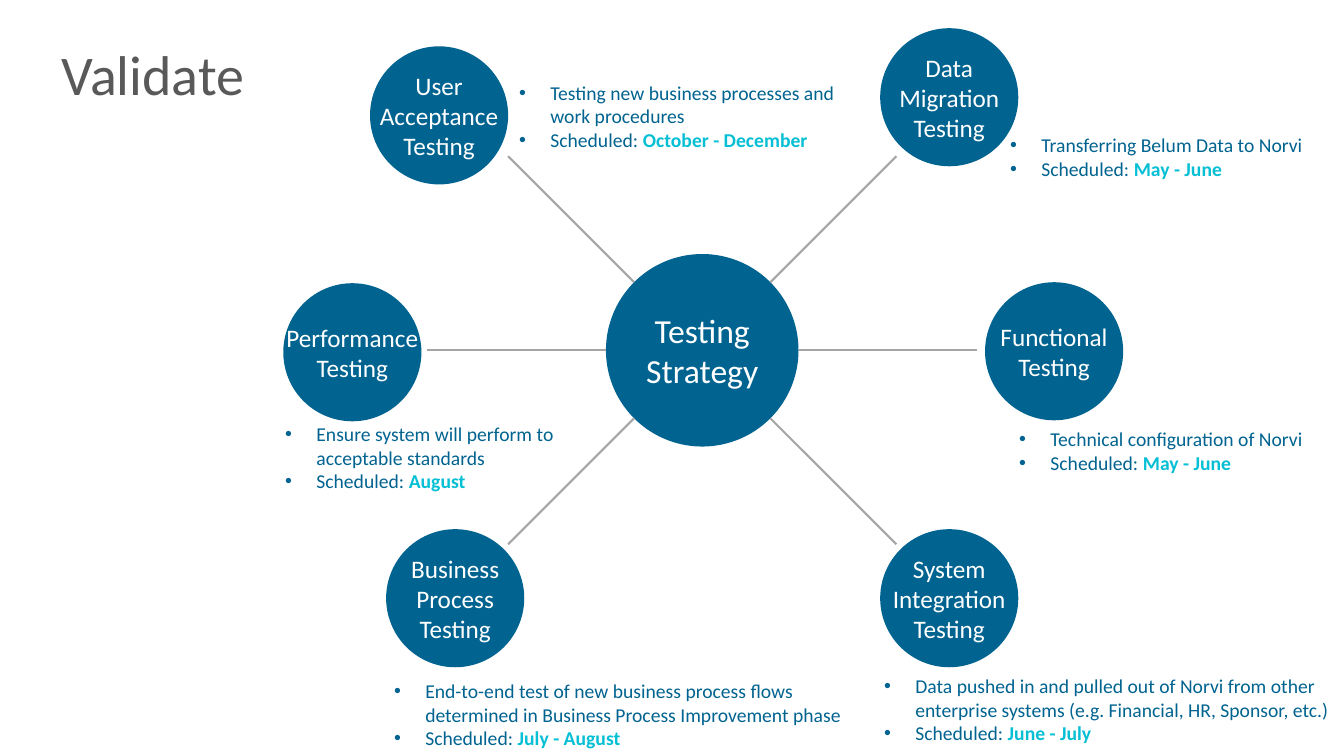
from dataclasses import dataclass
from math import hypot

from lxml.etree import SubElement
from pptx import Presentation
from pptx.dml.color import RGBColor
from pptx.enum.shapes import MSO_CONNECTOR, MSO_SHAPE
from pptx.enum.text import MSO_ANCHOR, PP_ALIGN
from pptx.oxml.ns import qn
from pptx.util import Inches, Pt


@dataclass(frozen=True)
class Theme:
    font: str = "Calibri"
    title: RGBColor = RGBColor(0x58, 0x59, 0x58)
    blue: RGBColor = RGBColor(0x00, 0x63, 0x90)
    accent: RGBColor = RGBColor(0x05, 0xBF, 0xD5)
    spoke: RGBColor = RGBColor(0xA5, 0xA5, 0xA5)
    white: RGBColor = RGBColor(0xFF, 0xFF, 0xFF)
    title_size: int = 40
    hub_size: int = 24
    stage_size: int = 18
    note_size: int = 14


@dataclass(frozen=True)
class Stage:
    label: str
    summary: str
    schedule: str
    direction: tuple  # way the spoke leaves the hub
    offset: tuple     # circle centre from hub centre
    note: tuple       # note left, top from the circle's corner, width, height


THEME = Theme()
HUB_BOX = (6.01, 2.52, 1.91, 1.91)
STAGE_DIAMETER = 1.37
DIAGONAL_RUN = 1.25
LEVEL_RUN = 1.77
BULLET_INDENT = 0.31

STAGES = [
    Stage("Data\nMigration\nTesting", "Transferring Belum Data to Norvi", "May - June",
          (1, -1), (2.45, -2.51), (1.19, 0.99, 3.13, 0.57)),
    Stage("Functional\nTesting", "Technical configuration of Norvi", "May - June",
          (1, 0), (3.49, 0.01), (0.24, 1.39, 3.15, 0.57)),
    Stage("System\nIntegration\nTesting",
          "Data pushed in and pulled out of Norvi from other enterprise systems "
          "(e.g. Financial, HR, Sponsor, etc.)", "June - July",
          (1, 1), (2.45, 2.46), (-0.06, 1.39, 4.66, 0.81)),
    Stage("Business\nProcess\nTesting",
          "End-to-end test of new business process flows determined in "
          "Business Process Improvement phase", "July - August",
          (-1, 1), (-2.45, 2.46), (-0.02, 1.44, 4.66, 0.81)),
    Stage("Performance\nTesting", "Ensure system will perform to acceptable standards", "August",
          (-1, 0), (-3.47, 0.02), (-0.08, 1.33, 3.23, 0.81)),
    Stage("User\nAcceptance\nTesting", "Testing new business processes and work procedures",
          "October - December", (-1, -1), (-2.61, -2.33), (1.38, 0.29, 3.48, 0.81)),
]


def inches(box):
    return [Inches(length) for length in box]


def set_font(paragraph, size, color):
    paragraph.font.name = THEME.font
    paragraph.font.size = Pt(size)
    paragraph.font.color.rgb = color


def add_title(slide, box, text):
    title = slide.shapes.title
    title.left, title.top, title.width, title.height = inches(box)
    title.text_frame.text = text
    title.text_frame.vertical_anchor = MSO_ANCHOR.MIDDLE
    heading = title.text_frame.paragraphs[0]
    heading.alignment = PP_ALIGN.LEFT
    heading.line_spacing = 0.9
    set_font(heading, THEME.title_size, THEME.title)


def add_circle(slide, box, label, size):
    circle = slide.shapes.add_shape(MSO_SHAPE.OVAL, *inches(box))
    circle.shadow.inherit = False
    circle.fill.solid()
    circle.fill.fore_color.rgb = THEME.blue
    circle.line.fill.background()
    frame = circle.text_frame
    frame.word_wrap = False
    frame.vertical_anchor = MSO_ANCHOR.MIDDLE
    frame.margin_left = frame.margin_right = frame.margin_top = frame.margin_bottom = 0
    frame.text = label
    for line in frame.paragraphs:
        line.alignment = PP_ALIGN.CENTER
        set_font(line, size, THEME.white)


def add_spoke(slide, hub_box, direction):
    left, top, width, _ = hub_box
    radius = width / 2
    run = DIAGONAL_RUN if all(direction) else LEVEL_RUN
    reach = radius / hypot(*direction)
    center = (left + radius, top + radius)
    start = [c + d * reach for c, d in zip(center, direction)]
    end = [s + d * run for s, d in zip(start, direction)]
    spoke = slide.shapes.add_connector(MSO_CONNECTOR.STRAIGHT, *inches(start + end))
    spoke.line.color.rgb = THEME.spoke
    spoke.line.width = Pt(1.5)
    SubElement(spoke._element.spPr, qn("a:effectLst"))


def add_bullet(paragraph):
    properties = paragraph._p.get_or_add_pPr()
    properties.set("marL", str(Inches(BULLET_INDENT)))
    properties.set("indent", str(-Inches(BULLET_INDENT)))
    SubElement(properties, qn("a:buFont")).set("typeface", "Arial")
    SubElement(properties, qn("a:buChar")).set("char", "•")


def add_note(slide, box, summary, schedule):
    frame = slide.shapes.add_textbox(*inches(box)).text_frame
    frame.word_wrap = True
    frame.text = f"{summary}\nScheduled: "
    for item in frame.paragraphs:
        add_bullet(item)
        set_font(item, THEME.note_size, THEME.blue)
    dates = frame.paragraphs[-1].add_run()
    dates.text = schedule
    dates.font.bold = True
    dates.font.color.rgb = THEME.accent


def add_stage(slide, hub_box, stage):
    left, top, width, height = hub_box
    x = left + width / 2 + stage.offset[0] - STAGE_DIAMETER / 2
    y = top + height / 2 + stage.offset[1] - STAGE_DIAMETER / 2
    add_spoke(slide, hub_box, stage.direction)
    add_circle(slide, (x, y, STAGE_DIAMETER, STAGE_DIAMETER), stage.label, THEME.stage_size)
    dx, dy, note_width, note_height = stage.note
    add_note(slide, (x + dx, y + dy, note_width, note_height), stage.summary, stage.schedule)


def add_testing_wheel(slide, hub_box):
    add_circle(slide, hub_box, "Testing\nStrategy", THEME.hub_size)
    for stage in STAGES:
        add_stage(slide, hub_box, stage)


def main():
    deck = Presentation()
    deck.slide_width, deck.slide_height = Inches(13.33), Inches(7.5)
    slide = deck.slides.add_slide(deck.slide_layouts[5])  # title only

    # Heading
    add_title(slide, (0.51, 0.36, 12.35, 0.82), "Validate")
    # Hub with its six testing stages
    add_testing_wheel(slide, HUB_BOX)

    deck.save("out.pptx")


if __name__ == "__main__":
    main()
